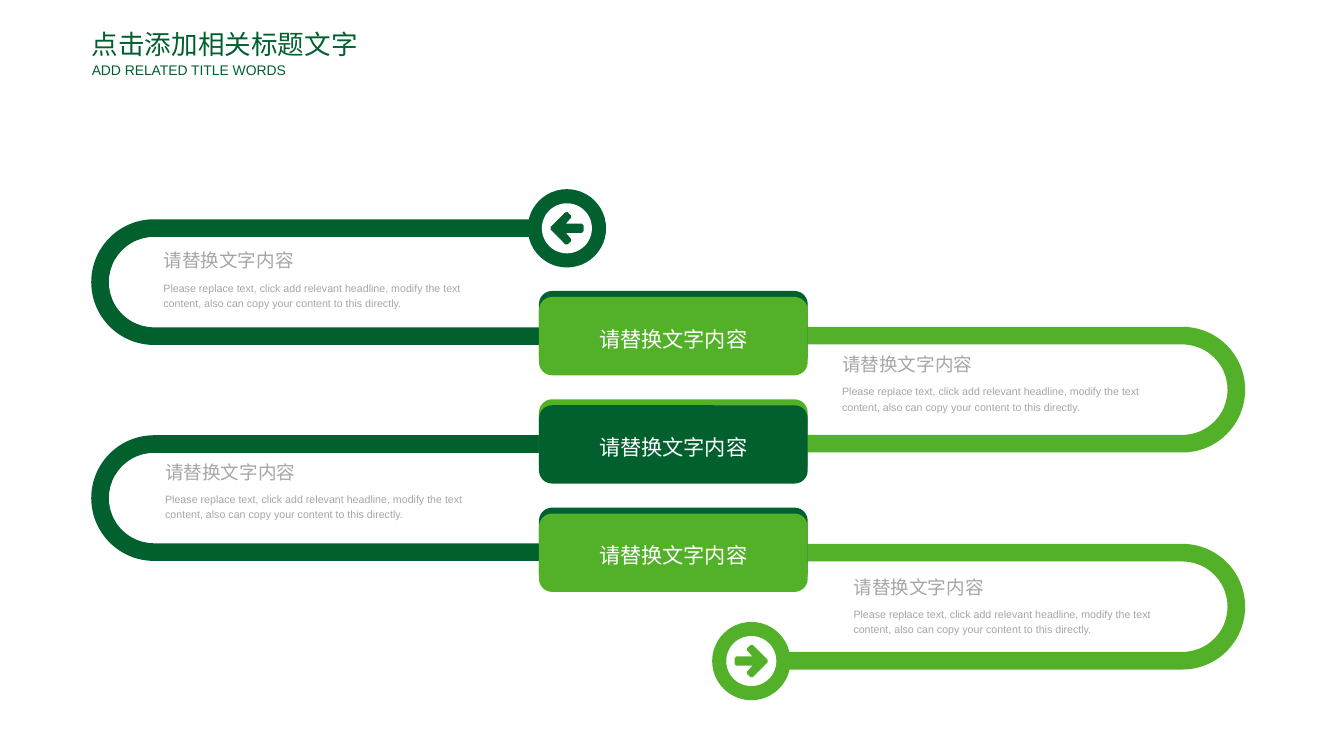
import pptx
import pptx.dml.color
import pptx.enum.shapes
import pptx.enum.text
import pptx.oxml
import pptx.oxml.ns
import pptx.util

Pt = pptx.util.Pt
RGBColor = pptx.dml.color.RGBColor
SHAPE = pptx.enum.shapes.MSO_SHAPE
ALIGN = pptx.enum.text.PP_ALIGN
ANCHOR = pptx.enum.text.MSO_ANCHOR

DARK = RGBColor(0x02, 0x60, 0x2E)
LIGHT = RGBColor(0x53, 0xB1, 0x29)
GREY = RGBColor(0xA6, 0xA6, 0xA6)
WHITE = RGBColor(0xFF, 0xFF, 0xFF)

HEADING = "请替换文字内容"
BODY = (
    "Please replace text, click add relevant headline, modify the text "
    "content, also can copy your content to this directly."
)

BAND_WIDTH, BAND_LENGTH = 117.4, 362.9
BANDS = [
    # centre x, centre y, rotation, colour
    (250.2, 223.9, 90, DARK),
    (756.4, 282.2, 270, LIGHT),
    (250.2, 386.6, 90, DARK),
    (756.4, 445.7, 270, LIGHT),
]
CAPTIONS = [(123.1, 187.9), (634.3, 266.2), (124.4, 347.2), (642.9, 433.6)]

BOX_LEFT, BOX_TOP, BOX_WIDTH, BOX_HEIGHT = 406, 223.7, 202.4, 59
BOX_PITCH, BOX_RIM = 81.6, 4.5
BOX_COLOURS = [(LIGHT, DARK), (DARK, LIGHT), (LIGHT, DARK)]

BADGE, BADGE_HOLE = 59, 37.7
ARROW_TOP = [(11.4, 0), (0.3, -11.2), (-2.2, -8.8), (3.6, -2.2), (-11.3, -2.2)]


def set_all(target, values):
    for name, value in values.items():
        setattr(target, name, value)


def paint(shape, colour):
    shape.shadow.inherit = False
    shape.fill.solid()
    shape.fill.fore_color.rgb = colour
    shape.line.fill.background()


def add_solid(slide, preset, left, top, width, height, colour):
    shape = slide.shapes.add_shape(preset, Pt(left), Pt(top), Pt(width), Pt(height))
    paint(shape, colour)
    return shape


def add_centred(slide, preset, x, y, width, height, colour):
    return add_solid(slide, preset, x - width / 2, y - height / 2, width, height, colour)


def write(frame, text, size, colour, inset=(0, 0), **paragraph_format):
    across, down = inset
    set_all(frame, {
        "margin_left": Pt(across), "margin_right": Pt(across),
        "margin_top": Pt(down), "margin_bottom": Pt(down),
    })
    para = frame.paragraphs[0]
    set_all(para, paragraph_format)
    span = para.add_run()
    span.text = text
    set_all(span.font, {"name": "Arial", "size": Pt(size)})
    span.font.color.rgb = colour


def add_text(slide, left, top, width, height, text, size, colour, wrap=False, **paragraph_format):
    box = slide.shapes.add_textbox(Pt(left), Pt(top), Pt(width), Pt(height))
    box.text_frame.word_wrap = wrap
    write(box.text_frame, text, size, colour, **paragraph_format)


def add_band(slide, x, y, rotation, colour):
    """Add a U-shaped band: a U-turn arrow with no head, laid on its side."""
    band = add_centred(slide, SHAPE.U_TURN_ARROW, x, y, BAND_WIDTH, BAND_LENGTH, colour)
    for index, value in enumerate((0.113, 0.25, 0, 0.403, 1)):
        band.adjustments[index] = value
    band.rotation = rotation
    band.element.spPr.find(pptx.oxml.ns.qn("a:xfrm")).set("flipV", "1")


def add_caption(slide, left, top):
    add_text(slide, left, top, 98.6, 17.3, HEADING, 14, GREY)
    add_text(slide, left, top + 22.2, 252, 22.3, BODY, 8, GREY, wrap=True, line_spacing=1.2)


def add_box(slide, top, colour, rim_colour):
    for offset, fill in ((-BOX_RIM, rim_colour), (0, colour)):
        box = add_solid(slide, SHAPE.ROUNDED_RECTANGLE, BOX_LEFT, top + offset,
                        BOX_WIDTH, BOX_HEIGHT, fill)
    box.text_frame.vertical_anchor = ANCHOR.MIDDLE
    write(box.text_frame, HEADING, 16, WHITE, inset=(10, 5),
          alignment=ALIGN.CENTER, line_spacing=1.2)


def add_badge(slide, x, y, direction, colour):
    """Add a ring around an arrow; direction is 1 for right and -1 for left."""
    for size, fill in ((BADGE, colour), (BADGE_HOLE, WHITE)):
        add_centred(slide, SHAPE.OVAL, x, y, size, size, fill)
    outline = ARROW_TOP + [(across, -down) for across, down in ARROW_TOP[:0:-1]]
    points = [(Pt(x + direction * across), Pt(y + down)) for across, down in outline]
    builder = slide.shapes.build_freeform(*points[0])
    builder.add_line_segments(points[1:], close=True)
    arrow = builder.convert_to_shape()
    paint(arrow, colour)
    arrow.line.color.rgb = colour
    arrow.line.width = Pt(2.5)
    line = arrow.element.spPr.find(pptx.oxml.ns.qn("a:ln"))
    line.append(pptx.oxml.parse_xml(f"<a:round {pptx.oxml.ns.nsdecls('a')}/>"))


def main():
    deck = pptx.Presentation()
    set_all(deck, {"slide_width": Pt(1012.3), "slide_height": Pt(569.5)})
    slide = deck.slides.add_slide(deck.slide_layouts[6])

    for band in BANDS:
        add_band(slide, *band)
    for row, (colour, rim_colour) in enumerate(BOX_COLOURS):
        add_box(slide, BOX_TOP + row * BOX_PITCH, colour, rim_colour)
    add_badge(slide, 565.9, 498, 1, LIGHT)
    add_badge(slide, 427, 172, -1, DARK)
    for left, top in CAPTIONS:
        add_caption(slide, left, top)

    add_text(slide, 69.1, 20.9, 201.6, 24.5, "点击添加相关标题文字", 20, DARK)
    add_text(slide, 69.1, 46.1, 149.8, 13, "ADD RELATED TITLE WORDS", 10.5, DARK)
    deck.save("out.pptx")


if __name__ == "__main__":
    main()
